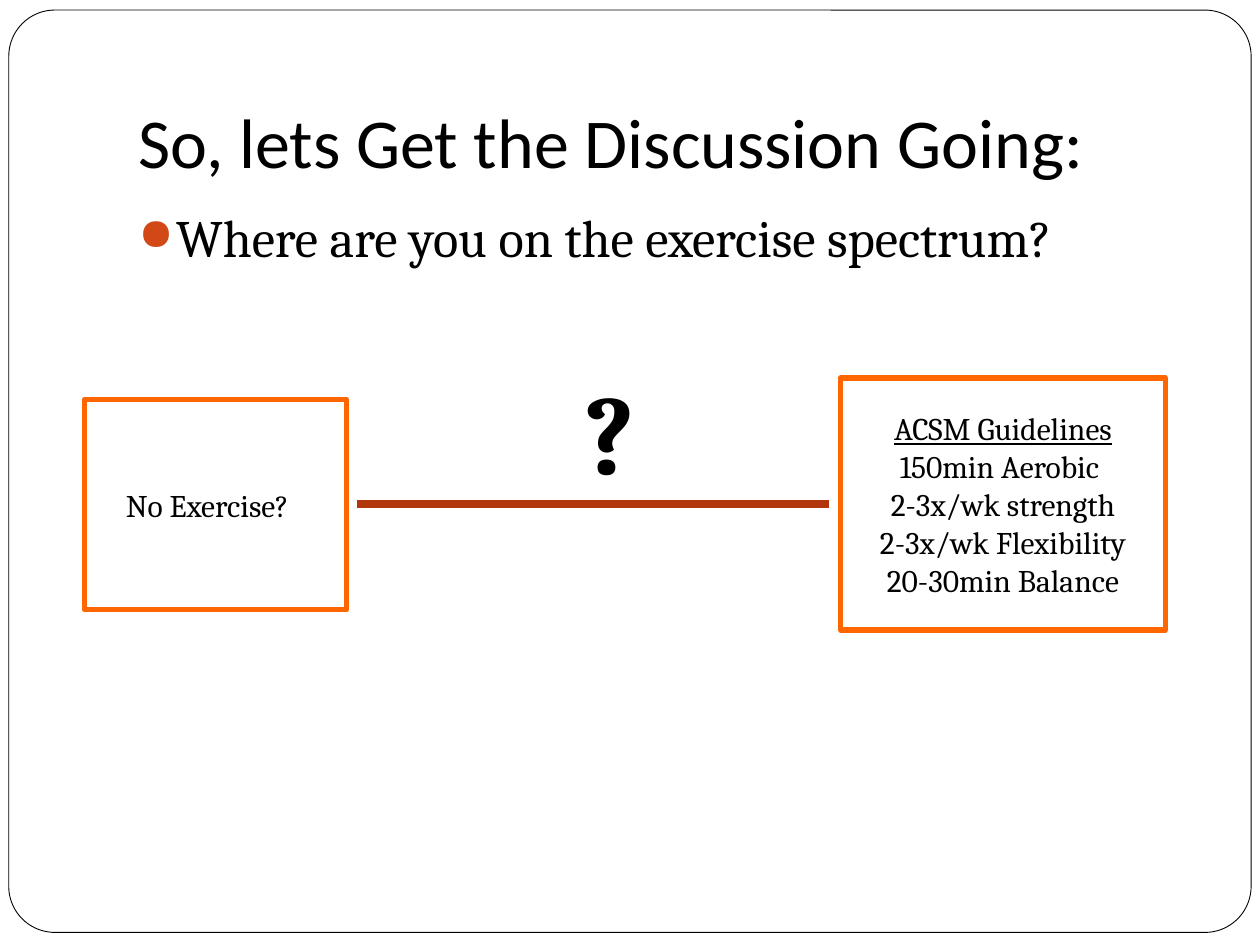
from dataclasses import dataclass

from lxml import etree
from pptx import Presentation
from pptx.dml.color import RGBColor
from pptx.enum.shapes import MSO_CONNECTOR, MSO_SHAPE
from pptx.enum.text import MSO_ANCHOR, MSO_AUTO_SIZE, PP_ALIGN
from pptx.oxml.ns import qn
from pptx.util import Pt

EMU_PER_PX = 9144  # 100 px to the inch
RECTANGLE, ROUNDED = MSO_SHAPE.RECTANGLE, MSO_SHAPE.ROUNDED_RECTANGLE
STRAIGHT = MSO_CONNECTOR.STRAIGHT
TOP, MIDDLE, BOTTOM = MSO_ANCHOR.TOP, MSO_ANCHOR.MIDDLE, MSO_ANCHOR.BOTTOM
LEFT, CENTER = PP_ALIGN.LEFT, PP_ALIGN.CENTER
NO_AUTO_SIZE, FIT_SHAPE = MSO_AUTO_SIZE.NONE, MSO_AUTO_SIZE.SHAPE_TO_FIT_TEXT
COLORS = {
    "paper": "FFFFFF",
    "ink": "000000",
    "bullet": "D34817",
    "box": "FF6600",
    "spectrum": "B1360B",
}


@dataclass(frozen=True)
class Area:
    left: int
    top: int
    width: int
    height: int

    def emu(self) -> list[int]:
        return [px(v) for v in (self.left, self.top, self.width, self.height)]


@dataclass(frozen=True)
class TextStyle:
    size: int
    font: str = "Cambria"
    bold: bool = False
    align: PP_ALIGN = LEFT
    anchor: MSO_ANCHOR = TOP
    insets: tuple[int, int, int, int] = (10, 5, 10, 5)
    wrap: bool = True


@dataclass(frozen=True)
class Line:
    text: str
    underline: bool = False


@dataclass(frozen=True)
class SpectrumEnd:
    area: Area
    lines: tuple[Line, ...]
    right_inset: int = 10


SPECTRUM_ENDS = (
    # The wider right inset sets the label slightly left of centre.
    SpectrumEnd(Area(67, 317, 208, 167), (Line("No Exercise?"),), right_inset=23),
    SpectrumEnd(
        Area(667, 300, 258, 200),
        (
            Line("ACSM Guidelines", underline=True),
            Line("150min Aerobic "),
            Line("2-3x/wk strength"),
            Line("2-3x/wk Flexibility"),
            Line("20-30min Balance"),
        ),
    ),
)


def px(value: int) -> int:
    return value * EMU_PER_PX


def color(name: str) -> RGBColor:
    return RGBColor.from_string(COLORS[name])


def write_text(frame, lines: tuple[Line, ...], style: TextStyle) -> None:
    frame.auto_size = NO_AUTO_SIZE if style.wrap else FIT_SHAPE
    frame.word_wrap = style.wrap
    frame.vertical_anchor = style.anchor
    (frame.margin_left, frame.margin_top,
     frame.margin_right, frame.margin_bottom) = map(px, style.insets)
    for index, line in enumerate(lines):
        paragraph = frame.add_paragraph() if index else frame.paragraphs[0]
        paragraph.alignment = style.align
        run = paragraph.add_run()
        run.text = line.text
        run.font.name = style.font
        run.font.size = Pt(style.size)
        run.font.bold = style.bold
        run.font.underline = line.underline
        run.font.color.rgb = color("ink")


def add_text(slide, area: Area, text: str, style: TextStyle):
    frame = slide.shapes.add_textbox(*area.emu()).text_frame
    write_text(frame, (Line(text),), style)
    return frame.paragraphs[0]


def add_bullet(paragraph, indent: int) -> None:
    properties = paragraph._p.get_or_add_pPr()
    properties.set("marL", str(px(indent)))
    properties.set("indent", str(-px(indent)))
    bullet_color = etree.SubElement(properties, qn("a:buClr"))
    etree.SubElement(bullet_color, qn("a:srgbClr"), val=COLORS["bullet"])
    etree.SubElement(properties, qn("a:buSzPct"), val="85000")
    etree.SubElement(properties, qn("a:buChar"), char="●")


def add_frame(slide) -> None:
    shape = slide.shapes.add_shape(ROUNDED, *Area(7, 8, 986, 732).emu())
    shape.shadow.inherit = False
    shape.adjustments[0] = 0.05
    shape.fill.solid()
    shape.fill.fore_color.rgb = color("paper")
    shape.line.color.rgb = color("ink")
    shape.line.width = Pt(0.5)


def add_spectrum_end(slide, end: SpectrumEnd) -> None:
    shape = slide.shapes.add_shape(RECTANGLE, *end.area.emu())
    shape.shadow.inherit = False
    shape.fill.background()
    shape.line.color.rgb = color("box")
    shape.line.width = Pt(3)
    style = TextStyle(18, align=CENTER, anchor=MIDDLE,
                      insets=(10, 5, end.right_inset, 5))
    write_text(shape.text_frame, end.lines, style)


def add_spectrum_line(slide) -> None:
    connector = slide.shapes.add_connector(
        STRAIGHT, px(283), px(400), px(658), px(400))
    connector.line.color.rgb = color("spectrum")
    connector.line.width = Pt(5)
    etree.SubElement(connector._element.spPr, qn("a:effectLst"))


def main() -> None:
    presentation = Presentation()
    presentation.slide_width, presentation.slide_height = px(1000), px(750)
    slide = presentation.slides.add_slide(presentation.slide_layouts[6])

    add_frame(slide)
    add_text(slide, Area(100, 30, 850, 125), "So, lets Get the Discussion Going:",
             TextStyle(40, font="Calibri", anchor=BOTTOM, insets=(10, 5, 10, 10)))
    question = add_text(slide, Area(100, 158, 850, 125),
                        "Where are you on the exercise spectrum?", TextStyle(30))
    add_bullet(question, indent=30)

    for end in SPECTRUM_ENDS:
        add_spectrum_end(slide, end)
    add_spectrum_line(slide)
    add_text(slide, Area(454, 283, 61, 118), "?",
             TextStyle(64, bold=True, wrap=False))

    presentation.save("out.pptx")


if __name__ == "__main__":
    main()
